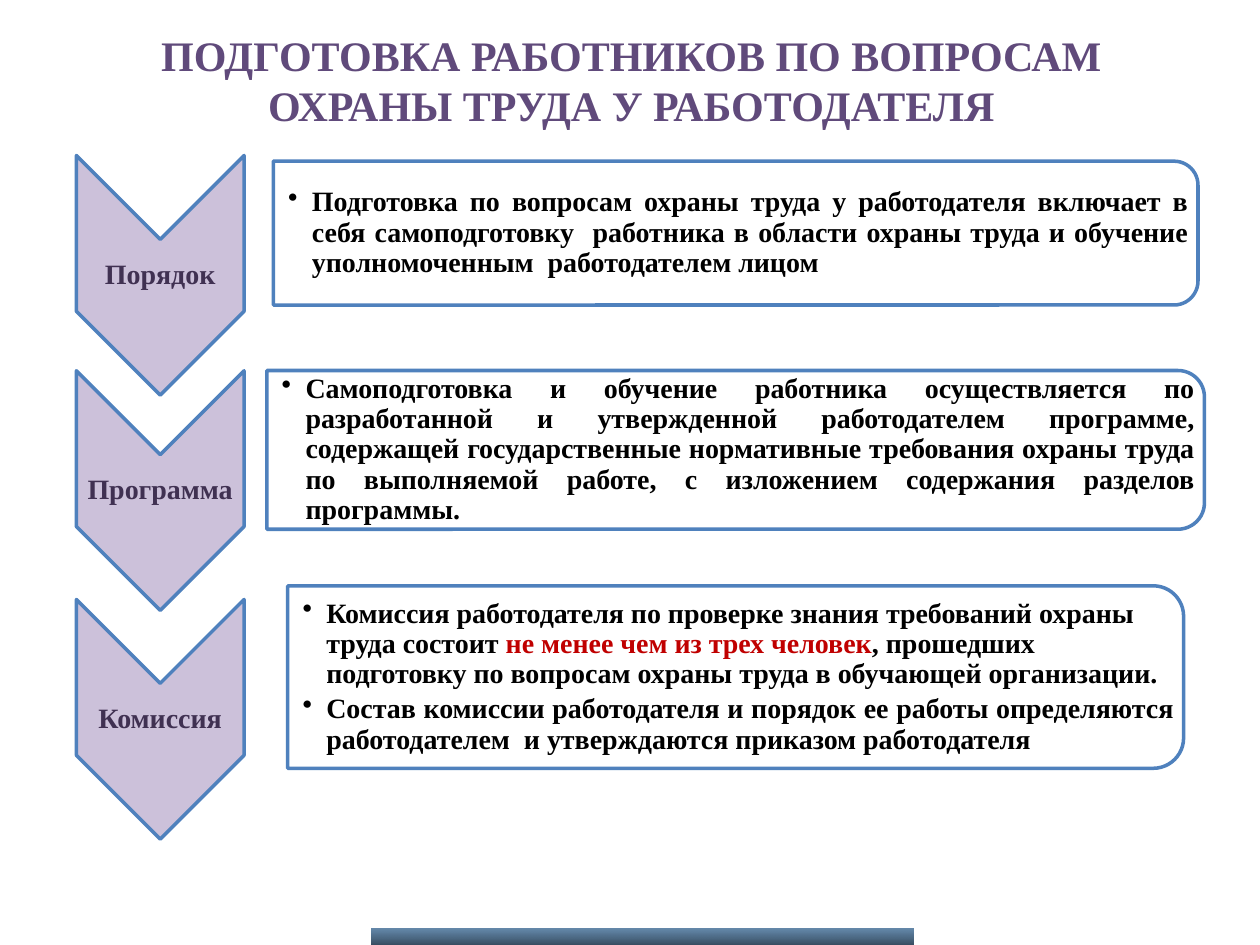
"""Build the slide on training workers in labour safety."""
import lxml.etree
import pptx
import pptx.dml.color
import pptx.enum.shapes
import pptx.enum.text
import pptx.oxml.ns
import pptx.util

Cm, Pt = pptx.util.Cm, pptx.util.Pt
KIND = pptx.enum.shapes.MSO_SHAPE
ALIGN = pptx.enum.text.PP_ALIGN
MID = pptx.enum.text.MSO_ANCHOR.MIDDLE
qn = pptx.oxml.ns.qn

HUE = {"title": "604A7B", "arrow": "CCC1DA", "edge": "4F81BD", "label": "403152",
       "text": "000000", "alert": "C00000", "panel": "FFFFFF",
       "top": "003C73", "base": "001C35"}

TITLE = "ПОДГОТОВКА РАБОТНИКОВ ПО ВОПРОСАМ ОХРАНЫ ТРУДА У РАБОТОДАТЕЛЯ"
STEPS = [
    {"label": "Порядок", "arrow": 5.55, "panel": 4.7, "size": (18.64, 2.9),
     "text": [(ALIGN.JUSTIFY, [
         ("Подготовка по вопросам охраны труда у работодателя включает в себя "
          "самоподготовку  работника в области охраны труда и обучение "
          "уполномоченным  работодателем лицом", "text")])]},
    {"label": "Программа", "arrow": 9.89, "panel": 9.07, "size": (18.9, 3.2),
     "text": [(ALIGN.JUSTIFY, [
         ("Самоподготовка и обучение работника осуществляется по разработанной "
          "и утвержденной работодателем программе, содержащей государственные "
          "нормативные требования охраны труда по выполняемой работе, с "
          "изложением содержания разделов программы.", "text")])]},
    {"label": "Комиссия", "arrow": 14.5, "panel": 13.65, "size": (18.06, 3.68),
     "text": [
         (ALIGN.LEFT, [
             ("Комиссия работодателя по проверке знания требований охраны труда "
              "состоит ", "text"),
             ("не менее чем из трех человек", "alert"),
             (", прошедших подготовку по вопросам охраны труда в обучающей "
              "организации.", "text")]),
         (ALIGN.JUSTIFY, [
             ("Состав комиссии работодателя и порядок ее работы определяются "
              "работодателем  и утверждаются приказом работодателя", "text")])]},
]
ARROW_X, PANEL_X = 3.23, 14.83
ARROW = (4.83, 3.38)
LABEL = (3.38, 1.45)
FONT = {"name": "Times New Roman", "bold": True}
TIGHT = {"margin_left": Cm(0.03), "margin_right": Cm(0.03),
         "margin_top": Cm(0.03), "margin_bottom": Cm(0.03)}


def tint(name):
    return pptx.dml.color.RGBColor.from_string(HUE[name])


def put(thing, vals):
    for key, val in vals.items():
        setattr(thing, key, val)


def frame(x, y, w, h):
    return Cm(x - w / 2), Cm(y - h / 2), Cm(w), Cm(h)


def fade(fill, parts):
    for node, part in zip(fill.iter(qn("a:srgbClr")), parts):
        lxml.etree.SubElement(node, qn("a:alpha")).set("val", str(part * 1000))


def draw(slide, kind, box, turn, fill):
    shape = slide.shapes.add_shape(kind, *box)
    shape.shadow.inherit = False
    shape.rotation = turn
    shape.fill.solid()
    shape.fill.fore_color.rgb = tint(fill)
    shape.line.color.rgb = tint("edge")
    shape.line.width = Pt(2)
    return shape


def dot(para):
    props = para._p.get_or_add_pPr()
    props.set("marL", str(Cm(0.48)))
    props.set("indent", str(-Cm(0.48)))
    lxml.etree.SubElement(props, qn("a:buChar")).set("char", "•")


def write(slide, box, paras, size, lines=None, marks=False, pads=None):
    body = slide.shapes.add_textbox(*box).text_frame
    put(body, {"word_wrap": True, "vertical_anchor": MID, **(pads or {})})
    for num, (align, runs) in enumerate(paras):
        para = body.add_paragraph() if num else body.paragraphs[0]
        put(para, {"alignment": align, "line_spacing": lines})
        if num:
            para.space_before = Pt(3)
        if marks:
            dot(para)
        for words, hue in runs:
            run = para.add_run()
            run.text = words
            put(run.font, {**FONT, "size": Pt(size)})
            run.font.color.rgb = tint(hue)


def step(slide, item):
    wide, high = ARROW
    draw(slide, KIND.CHEVRON, frame(ARROW_X, item["arrow"], wide, high), 90, "arrow")
    write(slide, frame(ARROW_X, item["arrow"], *LABEL),
          [(ALIGN.CENTER, [(item["label"], "label")])], 16, 0.9, pads=TIGHT)
    wide, high = item["size"]
    panel = draw(slide, KIND.ROUND_2_SAME_RECTANGLE,
                 frame(PANEL_X, item["panel"], high, wide), 90, "panel")
    fade(panel._element.spPr.find(qn("a:solidFill")), [90])
    box = frame(PANEL_X - 0.08, item["panel"], wide - 0.16, high * 0.9)
    write(slide, box, item["text"], 16, 0.9, True,
          {**TIGHT, "margin_left": Cm(0.3)})


def strip(slide):
    bar = slide.shapes.add_shape(KIND.RECTANGLE, Cm(7.49), Cm(18.72),
                                 Cm(10.92), Cm(0.33))
    bar.shadow.inherit = False
    bar.line.fill.background()
    bar.fill.gradient()
    bar.fill.gradient_angle = 270
    for stop, hue in zip(bar.fill.gradient_stops, ("top", "base")):
        stop.color.rgb = tint(hue)
    fade(bar._element.spPr.find(qn("a:gradFill")), [60, 80])


def main():
    deck = pptx.Presentation()
    put(deck, {"slide_width": Cm(25.4), "slide_height": Cm(19.05)})
    slide = deck.slides.add_slide(deck.slide_layouts[6])
    write(slide, (Cm(1.3), Cm(0.53), Cm(22.86), Cm(2.16)),
          [(ALIGN.CENTER, [(TITLE, "title")])], 24)
    strip(slide)
    for item in STEPS:
        step(slide, item)
    deck.save("out.pptx")


if __name__ == "__main__":
    main()
